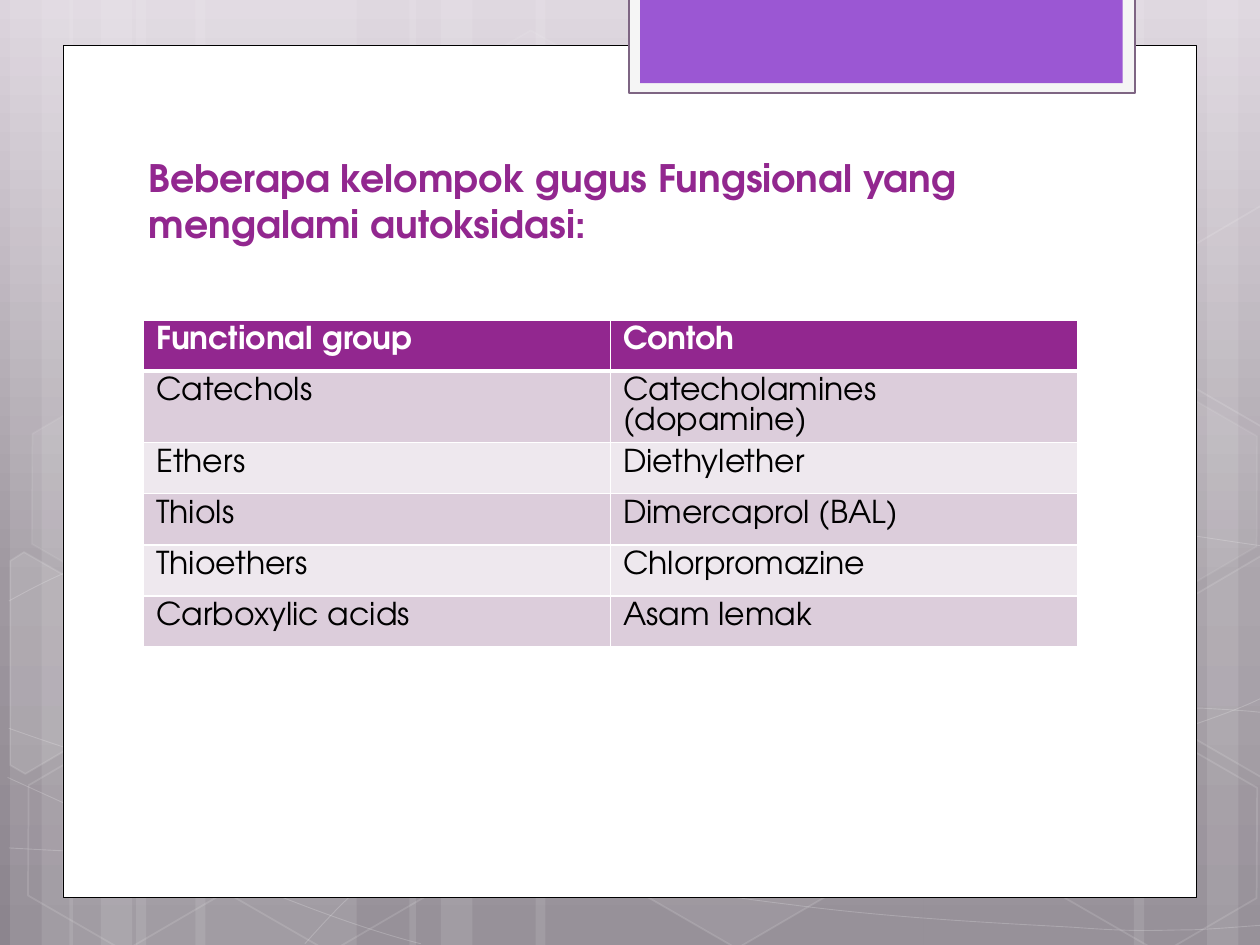
from copy import deepcopy
from math import cos, radians, sin

from lxml.etree import SubElement
from pptx import Presentation
from pptx.dml.color import RGBColor
from pptx.enum.shapes import MSO_SHAPE
from pptx.enum.text import MSO_ANCHOR, PP_ALIGN
from pptx.oxml.ns import qn
from pptx.util import Cm, Pt

FONT = "TeX Gyre Adventor"
WHITE, PURPLE = "FFFFFF", "92278F"
TILT = 30

BAR_WIDTHS = (1.75, 0.5, 0.83)
BAR_GROUPS = [
    ((1.08, 0.08, 0.33), BAR_WIDTHS),
    ((1.55, 0.55, 0.8), BAR_WIDTHS),
    ((7.33, 9.58, 9), BAR_WIDTHS),
    ((4.25, 3.25, 3.5), (3.08, 0.5, 0.83)),
]
# Each curve: start point, then Bezier segments (six numbers) or lines (two)
CURVES = [
    [(0.07, 6.73), (0.61, 6.76, 1.15, 6.79, 1.9, 6.78), (2.65, 6.77, 3.58, 6.75, 4.58, 6.65),
     (5.58, 6.55, 7, 6.36, 7.92, 6.17), (8.83, 5.98, 9.77, 5.68, 10.07, 5.51)],
    [(0.07, 4.77), (0.36, 4.61, 0.65, 4.46, 1.21, 4.31), (1.78, 4.16, 2.59, 3.94, 3.47, 3.87),
     (4.36, 3.8, 5.44, 3.79, 6.54, 3.87), (7.64, 3.95, 9.47, 4.26, 10.07, 4.34)],
    [(0.06, 6.17), (1.27, 6.72, 2.47, 7.27, 3.34, 7.49)],
    [(0.07, 5.78), (0.38, 5.89, 0.7, 6, 1.28, 6.16), (1.86, 6.31, 2.73, 6.56, 3.57, 6.73),
     (4.4, 6.9, 5.45, 7.08, 6.28, 7.18), (7.11, 7.29, 8, 7.33, 8.53, 7.36),
     (9.05, 7.4, 9.19, 7.38, 9.45, 7.38), (9.71, 7.37, 9.89, 7.35, 10.07, 7.34)],
    [(2.42, 7.49), (2.6, 7.29, 2.78, 7.09, 3.02, 6.91), (3.26, 6.73, 3.6, 6.53, 3.88, 6.39),
     (4.16, 6.25, 4.33, 6.19, 4.7, 6.09), (5.06, 5.99, 5.73, 5.85, 6.08, 5.78),
     (6.44, 5.71, 6.49, 5.71, 6.8, 5.69), (7.11, 5.66, 7.6, 5.63, 7.94, 5.62),
     (8.29, 5.61, 8.86, 5.62, 8.86, 5.62), (9.53, 5.62),
     (9.71, 5.63, 9.88, 5.64, 9.97, 5.65), (10.06, 5.66, 10.03, 5.65, 10.06, 5.66)],
]
# Left, top, fill opacity, line opacity
HEXAGONS = [
    (3.34, 0.36, 4, 8), (4.97, 5.89, 6, 12), (0.11, 5.91, 0, 12),
    (0.14, 3.12, 7, 8), (1.74, 5.92, 0, 12), (7.53, 4.53, 10, 12),
    (8.34, 5.93, 0, 12), (8.34, 3.14, 7, 8),
]
# Hexagons cut off by the slide edge: fill opacity, centre of rotation, corners
CUT_HEXAGONS = [
    (10, (0.36, 5.35),
     [(0.08, 4.45), (0.19, 4.38), (0.96, 4.82), (0.95, 5.7), (0.2, 6.14), (0.08, 6.07)]),
    (4, (9.85, 5.2),
     [(9.26, 4.85), (10.01, 4.41), (10.09, 4.46), (10.09, 6.13), (10.02, 6.17), (9.26, 5.73)]),
    (0, (9.85, 2.41),
     [(9.26, 2.07), (10.01, 1.63), (10.1, 1.68), (10.09, 3.35), (10.02, 3.39), (9.26, 2.95)]),
]
ROWS = [
    ("Functional group", "Contoh"),
    ("Catechols", "Catecholamines (dopamine)"),
    ("Ethers", "Diethylether"),
    ("Thiols", "Dimercaprol (BAL)"),
    ("Thioethers", "Chlorpromazine"),
    ("Carboxylic acids", "Asam lemak"),
]


def inch(value):
    return Cm(value * 2.54)


def rgb(color):
    return RGBColor.from_string(color)


def style(sp, fill=None, line=None, width=1, fill_alpha=100, line_alpha=100):
    """Set fill and outline; alphas are opacity in percent."""
    sp.shadow.inherit = False
    for paint, color, alpha in ((sp.fill, fill, fill_alpha), (sp.line.fill, line, line_alpha)):
        if not color or not alpha:
            paint.background()
            continue
        paint.solid()
        paint.fore_color.rgb = rgb(color)
        if alpha < 100:
            holder = sp.element.spPr if paint is sp.fill else sp.element.spPr.find(qn("a:ln"))
            clr = holder.find(qn("a:solidFill")).find(qn("a:srgbClr"))
            SubElement(clr, qn("a:alpha")).set("val", str(alpha * 1000))
    if line:
        sp.line.width = Pt(width)


def add_box(s, kind, box, **look):
    sp = s.shapes.add_shape(kind, *map(inch, box))
    style(sp, **look)
    return sp


def add_outline(s, points, close, **look):
    points = [(inch(x), inch(y)) for x, y in points]
    builder = s.shapes.build_freeform(*points[0])
    builder.add_line_segments(points[1:], close=close)
    sp = builder.convert_to_shape()
    style(sp, **look)
    return sp


def add_curve(s, x, y, curve):
    """Lay out all points as a polyline, then merge each triple into a Bezier."""
    points = [(x + seg[i], y + seg[i + 1]) for seg in curve for i in range(0, len(seg), 2)]
    sp = add_outline(s, points, False, line=WHITE, width=0.5, line_alpha=20)
    steps = iter(sp.element.findall(".//" + qn("a:lnTo")))
    for seg in curve[1:]:
        first = next(steps)
        if len(seg) == 6:
            first.tag = qn("a:cubicBezTo")
            for _ in range(2):
                step = next(steps)
                first.append(step[0])
                step.getparent().remove(step)


def add_cut_hexagon(s, x, y, fill_alpha, centre, corners):
    """Turn the corners back around the centre, then let the shape rotate them."""
    cx, cy = centre
    c, d = cos(radians(TILT)), sin(radians(TILT))
    level = [(x + cx + (px - cx) * c + (py - cy) * d, y + cy - (px - cx) * d + (py - cy) * c)
             for px, py in corners]
    sp = add_outline(s, level, True, fill=WHITE, fill_alpha=fill_alpha, line=WHITE, line_alpha=12)
    sp.rotation = TILT


def set_background(s):
    fill = s.background.fill
    fill.gradient()
    fill.gradient_angle = 270
    stops = s.element.find(".//" + qn("a:gsLst"))
    stops.insert(1, deepcopy(stops[0]))
    for stop, position, color in zip(fill.gradient_stops, (0, 0.62, 1), ("DCD4DD", "9F98A0", "8C858E")):
        stop.position = position
        stop.color.rgb = rgb(color)


def add_decoration(s, x, y, h):
    """Pale bars, curves and hexagons behind the panel."""
    for lefts, widths in BAR_GROUPS:
        for left, width in zip(lefts, widths):
            add_box(s, MSO_SHAPE.RECTANGLE, (x + left, y, width, h), fill=WHITE, fill_alpha=10)
    for curve in CURVES:
        add_curve(s, x, y, curve)
    for left, top, fill_alpha, line_alpha in HEXAGONS:
        sp = add_box(s, MSO_SHAPE.HEXAGON, (x + left, y + top, 1.75, 1.52), fill=WHITE,
                     fill_alpha=fill_alpha, line=WHITE, line_alpha=line_alpha)
        sp.adjustments[0] = 0.285
        sp.rotation = TILT
    for cut in CUT_HEXAGONS:
        add_cut_hexagon(s, x, y, *cut)


def add_panel(s, x, y, w, h):
    """White panel with a purple tab hanging over its top edge."""
    add_box(s, MSO_SHAPE.RECTANGLE, (x, y, w, h), fill=WHITE, line="000000", width=0.5)
    left, top = x + 4.49, y - 0.38
    add_box(s, MSO_SHAPE.RECTANGLE, (left, top, 4.02, 0.76), fill="F5F5F5", line="7E6583", width=1.25)
    add_box(s, MSO_SHAPE.RECTANGLE, (left + 0.09, top, 3.83, 0.68), fill="9B57D3")


def add_run(p, text, size, color, bold):
    p.alignment = PP_ALIGN.LEFT
    r = p.add_run()
    r.text = text
    r.font.name, r.font.size, r.font.bold = FONT, Pt(size), bold
    r.font.color.rgb = rgb(color)


def add_title(s, x, y, w, h):
    title = s.shapes.title
    title.left, title.top, title.width, title.height = map(inch, (x, y, w, h))
    tf = title.text_frame
    tf.word_wrap = True
    tf.vertical_anchor = MSO_ANCHOR.BOTTOM
    add_run(tf.paragraphs[0], "Beberapa kelompok gugus Fungsional yang mengalami autoksidasi:", 21.6, PURPLE, True)


def set_borders(cell, top, bottom):
    tc_pr = cell._tc.get_or_add_tcPr()
    for side, width in (("L", 1), ("R", 1), ("T", top), ("B", bottom)):
        ln = SubElement(tc_pr, qn("a:ln" + side), w=str(Pt(width)))
        SubElement(SubElement(ln, qn("a:solidFill")), qn("a:srgbClr")).set("val", WHITE)


def add_group_table(s, x, y, w, h):
    frame = s.shapes.add_table(len(ROWS), len(ROWS[0]), *map(inch, (x, y, w, h)))
    table = frame.table
    for i, texts in enumerate(ROWS):
        table.rows[i].height = Cm(1.03)
        header = i == 0
        fill = PURPLE if header else ("EEE8EE", "DCCDDB")[i % 2]
        for j, text in enumerate(texts):
            cell = table.cell(i, j)
            set_borders(cell, 3 if i == 1 else 1, 3 if header else 1)
            cell.fill.solid()
            cell.fill.fore_color.rgb = rgb(fill)
            add_run(cell.text_frame.paragraphs[0], text, 18, WHITE if header else "000000", header)
    frame.height = inch(h)


def main():
    prs = Presentation()
    prs.slide_width, prs.slide_height = inch(10), inch(7.5)
    s = prs.slides.add_slide(prs.slide_layouts[5])
    set_background(s)
    add_decoration(s, 0, 0, 7.5)
    add_panel(s, 0.5, 0.36, 9, 6.76)
    add_title(s, 1.08, 1.29, 7.74, 0.71)
    # The title placeholder comes first, so lift it above the panel
    s.shapes[-1].element.addnext(s.shapes.title.element)
    add_group_table(s, 1.14, 2.54, 7.41, 2.73)
    prs.save("out.pptx")


if __name__ == "__main__":
    main()
